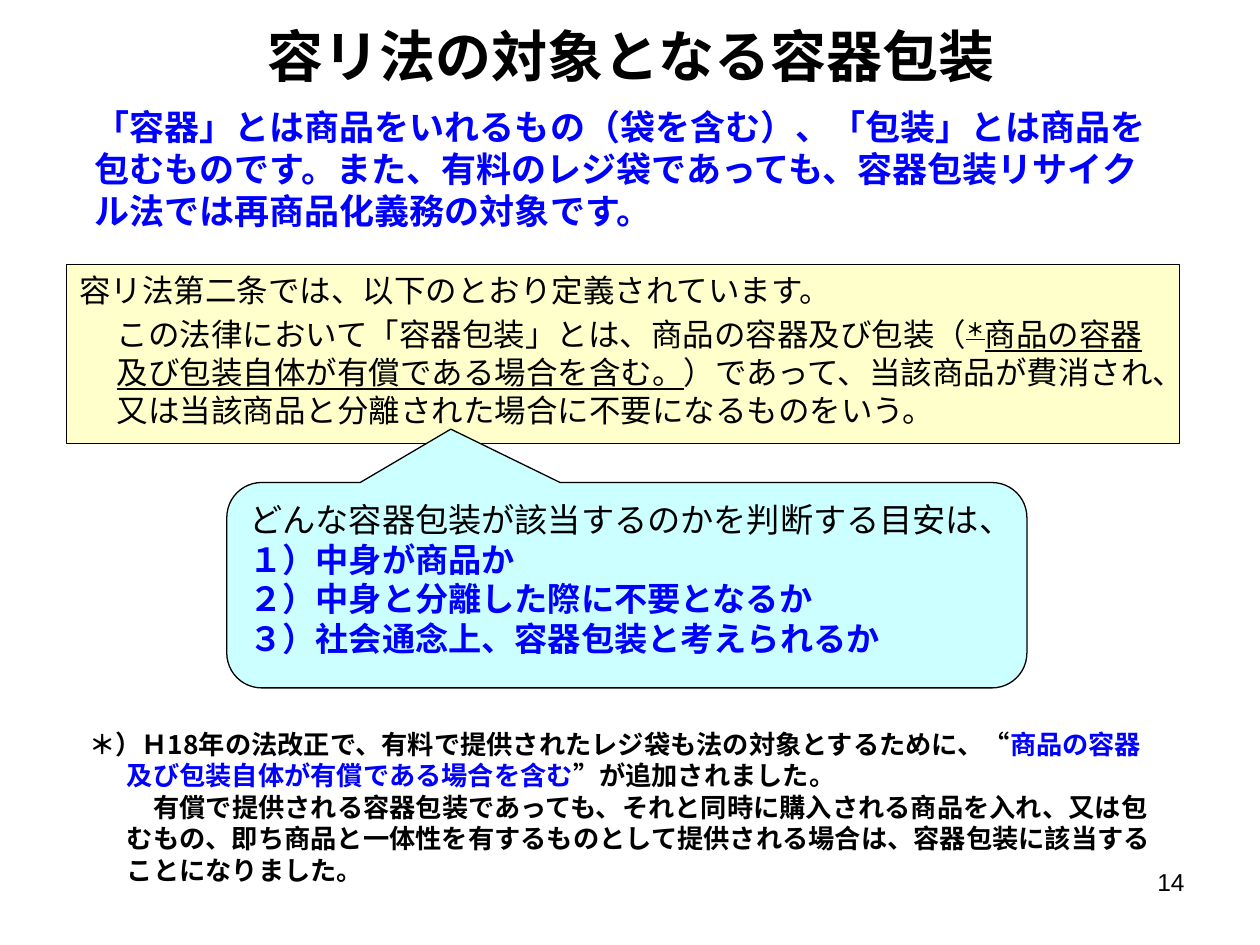
from typing import NamedTuple

from lxml.etree import SubElement
from pptx import Presentation
from pptx.dml.color import RGBColor
from pptx.enum.shapes import MSO_SHAPE
from pptx.enum.text import MSO_ANCHOR, PP_ALIGN
from pptx.oxml.ns import qn
from pptx.util import Inches, Pt

JAPANESE = "Noto Sans CJK JP"
BLACK, BLUE, YELLOW, CYAN = "000000", "0000FF", "FFFFCC", "CCFFFF"
HANGING = 0.3


class Box(NamedTuple):
    left: float
    top: float
    width: float
    height: float


class Phrase(NamedTuple):
    text: str
    color: str = BLACK
    bold: bool = False
    underline: bool = False
    baseline: int = 0


class Passage(NamedTuple):
    phrases: list[Phrase]
    margin: float = 0
    indent: float = 0
    before: float = 0


def rgb(value: str) -> RGBColor:
    return RGBColor.from_string(value)


def write(shape, passages: list[Passage], *, size: float, font: str = JAPANESE,
          align=PP_ALIGN.LEFT, anchor=MSO_ANCHOR.TOP) -> None:
    frame = shape.text_frame
    frame.word_wrap = True
    frame.vertical_anchor = anchor
    for index, passage in enumerate(passages):
        paragraph = frame.add_paragraph() if index else frame.paragraphs[0]
        paragraph.alignment = align
        paragraph.line_spacing = Pt(1.2 * size)
        paragraph.space_before = Pt(passage.before)
        properties = paragraph._p.get_or_add_pPr()
        properties.set("marL", str(Inches(passage.margin)))
        properties.set("indent", str(Inches(passage.indent)))
        for phrase in passage.phrases:
            run = paragraph.add_run()
            run.text = phrase.text
            run.font.size = Pt(size)
            run.font.name = font
            run.font.bold = phrase.bold
            run.font.underline = phrase.underline
            run.font.color.rgb = rgb(phrase.color)
            run_properties = run._r.get_or_add_rPr()
            SubElement(run_properties, qn("a:ea")).set("typeface", font)
            if phrase.baseline:
                run_properties.set("baseline", str(phrase.baseline * 1000))


def add_text(slide, box: Box, passages: list[Passage], **text_format) -> None:
    write(slide.shapes.add_textbox(*map(Inches, box)), passages, **text_format)


def add_panel(slide, kind, box: Box, fill: str, passages: list[Passage],
              adjustments: tuple[float, ...] = (), **text_format) -> None:
    panel = slide.shapes.add_shape(kind, *map(Inches, box))
    panel.shadow.inherit = False
    panel.fill.solid()
    panel.fill.fore_color.rgb = rgb(fill)
    panel.line.color.rgb = rgb(BLACK)
    panel.line.width = Pt(0.75)
    for index, value in enumerate(adjustments):
        panel.adjustments[index] = value
    write(panel, passages, **text_format)


def main() -> None:
    """Build the slide on containers and packaging covered by the law."""
    deck = Presentation()
    deck.slide_width, deck.slide_height = Inches(10), Inches(7.5)
    slide = deck.slides.add_slide(deck.slide_layouts[6])

    title = [Passage([Phrase("容リ法の対象となる容器包装", bold=True)])]
    summary = [Passage([Phrase(
        "「容器」とは商品をいれるもの（袋を含む）、「包装」とは商品を包むものです。"
        "また、有料のレジ袋であっても、容器包装リサイクル法では再商品化義務の対象です。",
        BLUE, bold=True)])]
    definition = [
        Passage([Phrase("容リ法第二条では、以下のとおり定義されています。")], HANGING, -HANGING),
        Passage([
            Phrase("この法律において「容器包装」とは、商品の容器及び包装（"),
            Phrase("＊", bold=True, underline=True, baseline=30),
            Phrase("商品の容器及び包装自体が有償である場合を含む。", underline=True),
            Phrase("）であって、当該商品が費消され、又は当該商品と分離された場合に不要になるものをいう。"),
        ], HANGING, before=3.6),
    ]
    criteria = ["１）中身が商品か", "２）中身と分離した際に不要となるか",
                "３）社会通念上、容器包装と考えられるか"]
    guideline = [Passage([Phrase("どんな容器包装が該当するのかを判断する目安は、")])]
    guideline += [Passage([Phrase(item, BLUE, bold=True)]) for item in criteria]
    footnote = [
        Passage([
            Phrase("＊）Ｈ18年の法改正で、有料で提供されたレジ袋も法の対象とするために、“", bold=True),
            Phrase("商品の容器及び包装自体が有償である場合を含む", BLUE, bold=True),
            Phrase("”が追加されました。", bold=True),
        ], HANGING, -HANGING),
        Passage([Phrase(
            "有償で提供される容器包装であっても、それと同時に購入される商品を入れ、又は包むもの、"
            "即ち商品と一体性を有するものとして提供される場合は、容器包装に該当することになりました。",
            bold=True)], HANGING, 0.21),
    ]

    add_text(slide, Box(0.51, 0.13, 9, 0.62), title, size=32,
             align=PP_ALIGN.CENTER, anchor=MSO_ANCHOR.MIDDLE)
    add_panel(slide, MSO_SHAPE.RECTANGLE, Box(0.53, 2.1, 8.83, 1.42), YELLOW, definition, size=18)
    add_text(slide, Box(7.17, 6.83, 2.33, 0.52), [Passage([Phrase("14")])],
             size=14, font="Arial", align=PP_ALIGN.RIGHT)
    add_text(slide, Box(0.65, 0.79, 8.59, 1.11), summary, size=20)
    add_text(slide, Box(0.61, 5.73, 8.66, 1.36), footnote, size=15)
    add_panel(slide, MSO_SHAPE.ROUNDED_RECTANGULAR_CALLOUT, Box(1.8, 3.83, 6.35, 1.63), CYAN,
              guideline, (-0.22, -0.76, 0.17), size=19)
    deck.save("out.pptx")


if __name__ == "__main__":
    main()
